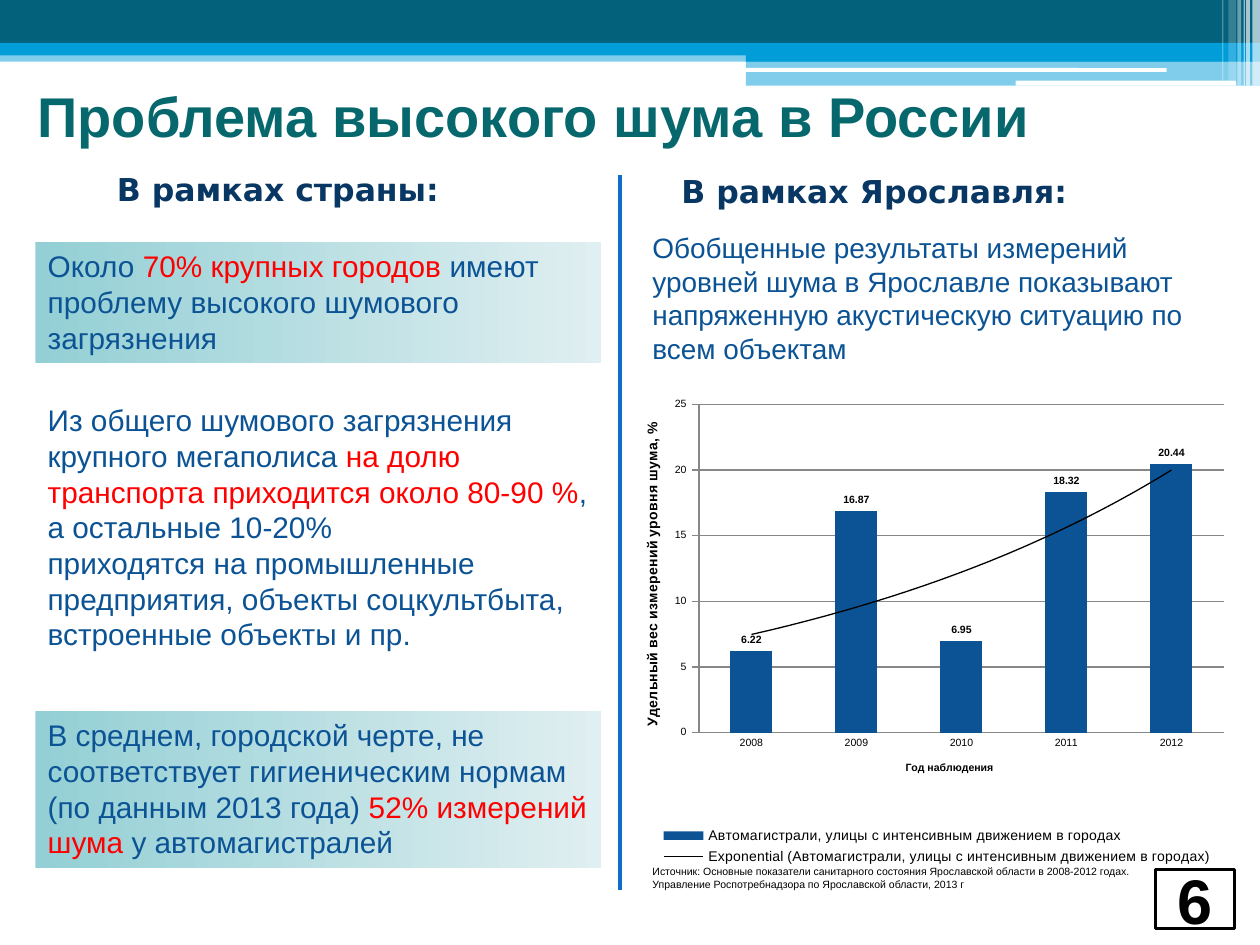
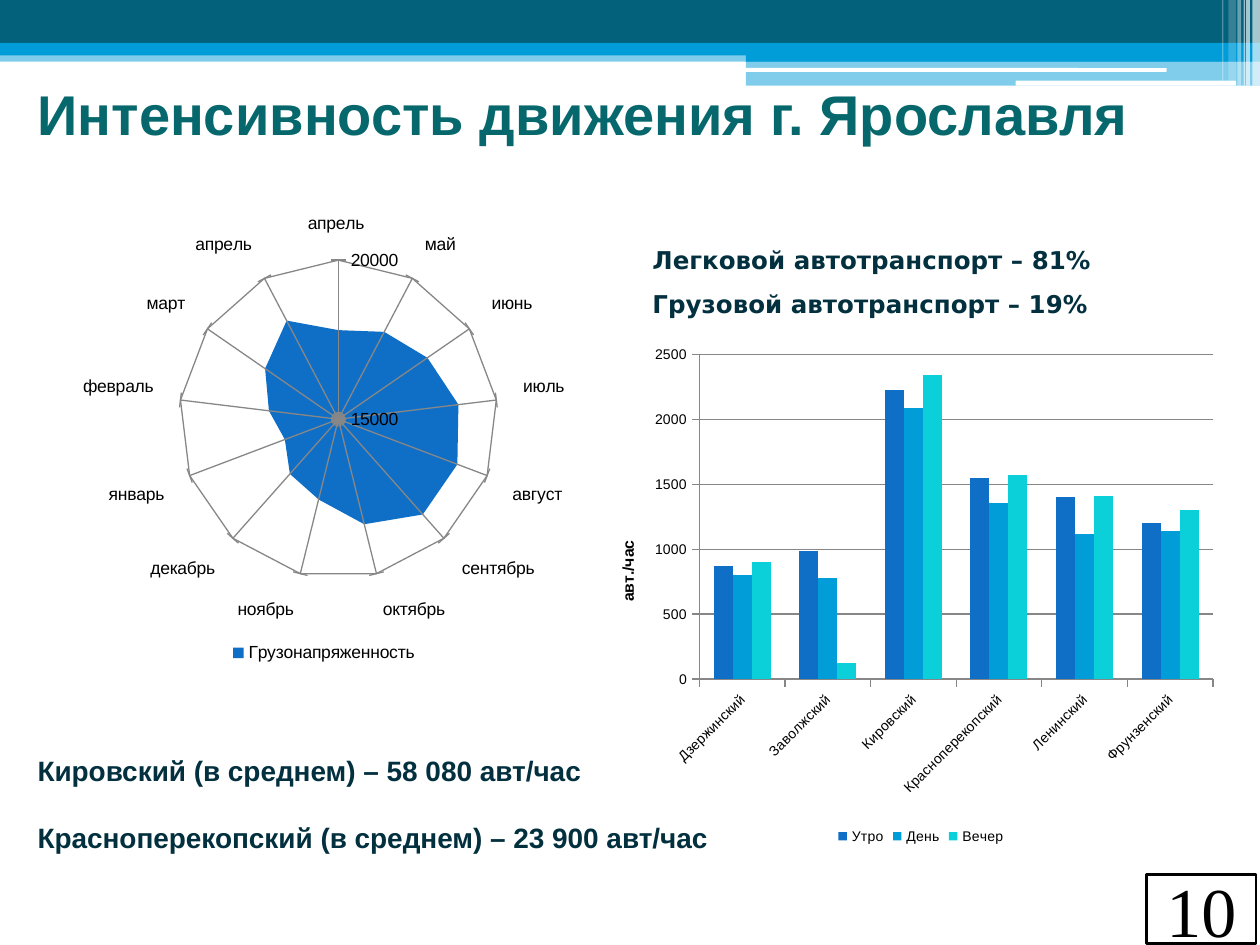
from collections import namedtuple

from lxml import etree
from pptx import Presentation
from pptx.chart.data import CategoryChartData
from pptx.dml.color import RGBColor
from pptx.enum.chart import XL_CHART_TYPE, XL_LABEL_POSITION, XL_LEGEND_POSITION, XL_TICK_MARK
from pptx.enum.shapes import MSO_CONNECTOR, MSO_SHAPE
from pptx.enum.text import MSO_ANCHOR, MSO_AUTO_SIZE, PP_ALIGN
from pptx.oxml import parse_xml
from pptx.oxml.ns import nsdecls, qn
from pptx.util import Inches, Pt

RECTANGLE, ROUNDED = MSO_SHAPE.RECTANGLE, MSO_SHAPE.ROUNDED_RECTANGLE
COLUMNS, RADAR = XL_CHART_TYPE.COLUMN_CLUSTERED, XL_CHART_TYPE.RADAR_FILLED
TICK_NONE, TICK_OUT = XL_TICK_MARK.NONE, XL_TICK_MARK.OUTSIDE

WHITE = RGBColor(0xFF, 0xFF, 0xFF)
BLACK = RGBColor(0x00, 0x00, 0x00)
GREY = RGBColor(0x87, 0x87, 0x87)
RED = RGBColor(0xFF, 0x00, 0x00)
PETROL = RGBColor(0x04, 0x61, 0x7B)
SKY = RGBColor(0x00, 0x9D, 0xD9)
BLUE = RGBColor(0x0F, 0x6F, 0xC6)
CYAN = RGBColor(0x0B, 0xD0, 0xD9)
BODY_BLUE = RGBColor(0x0B, 0x53, 0x94)
NAVY = RGBColor(0x08, 0x37, 0x63)
DARK_TEAL = RGBColor(0x02, 0x30, 0x3E)
TITLE_TEAL = RGBColor(0x06, 0x68, 0x6C)
GRADIENT = (RGBColor(0x93, 0xCF, 0xD5), RGBColor(0xE0, 0xEF, 0xF1))

SANS, WIDE, SERIF = "Arial", "DejaVu Sans", "Times New Roman"
TITLE = {"name": SANS, "size": Pt(32), "bold": True, "color": TITLE_TEAL}
HEADING = {"name": WIDE, "size": Pt(18), "bold": True, "color": NAVY}
FACT = {"name": SANS, "size": Pt(17), "color": BODY_BLUE}
SUMMARY = {"name": SANS, "size": Pt(16), "color": BODY_BLUE}
SOURCE = {"name": SANS, "size": Pt(6), "color": BLACK}
SHARE = {"name": WIDE, "size": Pt(14), "bold": True, "color": DARK_TEAL}
DISTRICT = {"name": SANS, "size": Pt(16), "bold": True, "color": DARK_TEAL}
NUMBER_SANS = {"name": SANS, "size": Pt(36), "bold": True, "color": BLACK}
NUMBER_SERIF = {"name": SERIF, "size": Pt(40), "color": BLACK}

Box = namedtuple("Box", "left top width height")

BANDS = [
    (RECTANGLE, Box(0, 0.4, 10, 0.09), SKY, 50),
    (RECTANGLE, Box(0, 0, 10, 0.34), PETROL, 100),
    (RECTANGLE, Box(0, 0.34, 10, 0.1), SKY, 100),
    (RECTANGLE, Box(5.92, 0.39, 4.08, 0.1), SKY, 100),
    (RECTANGLE, Box(5.92, 0.48, 4.08, 0.2), SKY, 50),
    (ROUNDED, Box(5.91, 0.54, 3.35, 0.03), WHITE, 100),
    (ROUNDED, Box(8.06, 0.64, 1.75, 0.04), WHITE, 100),
]
STRIPES = [(9.94, 0.06, 0.68, 65), (9.89, 0.03, 0.68, 65), (9.87, 0.01, 0.68, 60),
           (9.82, 0.03, 0.68, 40), (9.75, 0.06, 0.64, 20), (9.7, 0.01, 0.64, 30)]


def inches(box):
    """Convert a box to lengths for python-pptx."""
    return [Inches(value) for value in box]


def within(area, left, top, width, height):
    """Return a box placed relative to the corner of an area."""
    return Box(area.left + left, area.top + top, width, height)


def style_font(font, style):
    """Apply a dict of format values to a font."""
    for name, value in style.items():
        if name == "color":
            font.color.rgb = value
        else:
            setattr(font, name, value)


def write(frame, paragraphs, style, align=PP_ALIGN.LEFT, spacing=()):
    """Fill a text frame; each paragraph is a list of strings or (string, colour) pairs."""
    frame.word_wrap = True
    for index, runs in enumerate(paragraphs):
        paragraph = frame.paragraphs[0] if index == 0 else frame.add_paragraph()
        paragraph.alignment = align
        if spacing:
            paragraph.line_spacing = spacing[index]
        for item in runs:
            text, color = (item, style["color"]) if isinstance(item, str) else item
            run = paragraph.add_run()
            run.text = text
            style_font(run.font, {**style, "color": color})


def add_text(slide, box, paragraphs, style, wrap=True, spacing=()):
    """Add a text box that grows with its text."""
    frame = slide.shapes.add_textbox(*inches(box)).text_frame
    write(frame, paragraphs, style, spacing=spacing)
    frame.word_wrap = wrap
    frame.auto_size = MSO_AUTO_SIZE.SHAPE_TO_FIT_TEXT


def add_block(slide, kind, box, color, opacity=100):
    """Add a plain filled shape without outline or shadow."""
    shape = slide.shapes.add_shape(kind, *inches(box))
    shape.shadow.inherit = False
    shape.line.fill.background()
    shape.fill.solid()
    shape.fill.fore_color.rgb = color
    if opacity < 100:
        rgb = shape.element.spPr.find(".//" + qn("a:srgbClr"))
        etree.SubElement(rgb, qn("a:alpha")).set("val", str(opacity * 1000))
    return shape


def add_fact(slide, box, paragraphs):
    """Add a fact on a gradient panel."""
    shape = add_block(slide, RECTANGLE, box, GRADIENT[0])
    shape.fill.gradient()
    shape.fill.gradient_angle = 0
    for stop, color in zip(shape.fill.gradient_stops, GRADIENT):
        stop.color.rgb = color
    write(shape.text_frame, paragraphs, FACT)
    shape.text_frame.vertical_anchor = MSO_ANCHOR.TOP
    shape.text_frame.auto_size = MSO_AUTO_SIZE.SHAPE_TO_FIT_TEXT


def add_header(slide, title, top):
    """Draw the shared bands and the slide title."""
    for band in BANDS:
        add_block(slide, *band)
    for left, width, height, opacity in STRIPES:
        add_block(slide, RECTANGLE, Box(left, 0, width, height), WHITE, opacity)
    add_text(slide, Box(0.2, top, 9.29, 0.64), [[title]], TITLE)


def add_number(slide, box, number, style):
    """Draw the framed slide number."""
    shape = add_block(slide, RECTANGLE, box, WHITE)
    shape.line.color.rgb = BLACK
    shape.line.width = Pt(1.5)
    write(shape.text_frame, [[number]], style, PP_ALIGN.CENTER)
    shape.text_frame.vertical_anchor = MSO_ANCHOR.MIDDLE


def add_divider(slide, left, top, bottom):
    """Draw the vertical line between the columns."""
    line = slide.shapes.add_connector(
        MSO_CONNECTOR.STRAIGHT, Inches(left), Inches(top), Inches(left), Inches(bottom))
    line.line.color.rgb = BLUE
    line.line.width = Pt(2.25)
    etree.SubElement(line.element.spPr, qn("a:effectLst"))


def add_chart(slide, kind, box, categories, series, size, legend_size, scale, category_tick):
    """Add a chart with bottom legend, grey axes and the given (low, high, step) scale."""
    data = CategoryChartData()
    data.categories = categories
    for name, values, _ in series:
        data.add_series(name, values)
    chart = slide.shapes.add_chart(kind, *inches(box), data).chart
    style = {"name": SANS, "size": Pt(size), "bold": False, "color": BLACK}
    style_font(chart.font, style)
    chart.has_title = False
    chart.has_legend = True
    chart.legend.position = XL_LEGEND_POSITION.BOTTOM
    chart.legend.include_in_layout = False
    style_font(chart.legend.font, {**style, "size": Pt(legend_size)})
    axis = chart.value_axis
    axis.minimum_scale, axis.maximum_scale, axis.major_unit = scale
    axis.has_major_gridlines = True
    axis.major_gridlines.format.line.color.rgb = GREY
    for axis, tick in ((chart.value_axis, TICK_OUT), (chart.category_axis, category_tick)):
        axis.major_tick_mark = tick
        axis.minor_tick_mark = TICK_NONE
        axis.format.line.color.rgb = GREY
        style_font(axis.tick_labels.font, style)
    for plotted, (_, _, color) in zip(chart.plots[0].series, series):
        plotted.format.fill.solid()
        plotted.format.fill.fore_color.rgb = color
    chart.plots[0].vary_by_categories = False
    return chart


def add_columns(slide, box, layout, *details):
    """Add a column chart whose inner plot area follows the layout fractions."""
    chart = add_chart(slide, COLUMNS, box, *details)
    chart.plots[0].gap_width = 150
    chart.plots[0].overlap = 0
    area = chart.element.find(".//" + qn("c:plotArea"))
    for existing in area.findall(qn("c:layout")):
        area.remove(existing)
    parts = "".join(f'<c:{tag} val="{value}"/>' for tag, value in zip("xywh", layout))
    area.insert(0, parse_xml(
        f'<c:layout {nsdecls("c")}><c:manualLayout><c:layoutTarget val="inner"/>'
        f'<c:xMode val="edge"/><c:yMode val="edge"/>{parts}</c:manualLayout></c:layout>'))
    return chart


def title_axis(axis, text, size):
    """Give an axis a bold title."""
    write_to = axis.axis_title.text_frame.paragraphs[0].add_run()
    write_to.text = text
    style_font(write_to.font, {"name": SANS, "size": Pt(size), "bold": True, "color": BLACK})


def add_noise_chart(slide, box):
    """Chart the yearly share of noise measurements with its exponential trend."""
    name = "Автомагистрали, улицы с интенсивным движением в городах"
    chart = add_columns(
        slide, box, (0.099, 0.024, 0.883, 0.689),
        ["2008", "2009", "2010", "2011", "2012"],
        [(name, [6.22, 16.87, 6.95, 18.32, 20.44], BODY_BLUE)], 6, 8, (0, 25, 5), TICK_NONE)
    title_axis(chart.category_axis, "Год наблюдения", 6)
    title_axis(chart.value_axis, "Удельный вес измерений уровня шума, %", 8)
    labels = chart.plots[0].series[0].data_labels
    labels.show_value = True
    labels.position = XL_LABEL_POSITION.OUTSIDE_END
    style_font(labels.font, {"name": SANS, "size": Pt(6), "bold": True, "color": BLACK})
    chart.element.find(".//" + qn("c:ser")).find(qn("c:cat")).addprevious(parse_xml(
        f'<c:trendline {nsdecls("c", "a")}><c:spPr><a:ln w="9525"><a:solidFill>'
        f'<a:srgbClr val="{BLACK}"/></a:solidFill></a:ln></c:spPr>'
        '<c:trendlineType val="exp"/><c:dispRSqr val="0"/><c:dispEq val="0"/></c:trendline>'))


def add_country_column(slide, area):
    """Place the facts about the country."""
    add_text(slide, within(area, 0.55, 0, 2.78, 0.4), [["В рамках страны:"]], HEADING, wrap=False)
    add_fact(slide, within(area, 0, 0.62, area.width, 0.96), [
        ["Около ", ("70% крупных городов ", RED), "имеют проблему высокого шумового"],
        ["загрязнения"]])
    add_text(slide, within(area, 0, 1.84, 4.57, 2.1), [
        ["Из общего шумового загрязнения крупного мегаполиса ", ("на долю", RED)],
        [("транспорта приходится около 80-90 %", RED), ", а остальные 10-20%"],
        ["приходятся на промышленные предприятия, объекты соцкультбыта,"],
        ["встроенные объекты и пр."]], FACT)
    add_fact(slide, within(area, 0, 4.34, area.width, 1.25), [
        ["В среднем, городской черте, не соответствует гигиеническим нормам "
         "(по данным 2013 года) ", ("52% измерений шума", RED), " у автомагистралей"]])


def add_city_column(slide, area):
    """Place the summary, chart and source for the city."""
    add_text(slide, within(area, 0.23, 0.02, 3.3, 0.4), [["В рамках Ярославля:"]], HEADING,
             wrap=False)
    add_text(slide, within(area, 0, 0.48, 4.8, 1.18), [
        ["Обобщенные результаты измерений уровней шума в Ярославле показывают "
         "напряженную акустическую ситуацию по всем объектам"]], SUMMARY)
    add_noise_chart(slide, within(area, 0, 1.82, area.width, 3.78))
    add_text(slide, within(area, 0, 5.52, 4.09, 0.3), [
        ["Источник: Основные показатели санитарного состояния Ярославской области "
         "в 2008-2012 годах. Управление Роспотребнадзора по Ярославской области, 2013 г"]], SOURCE)


def add_load_chart(slide, box):
    """Chart the monthly traffic load as a filled radar."""
    months = ["апрель ", "май", "июнь", "июль", "август", "сентябрь", "октябрь", "ноябрь",
              "декабрь", "январь", "февраль", "март", "апрель"]
    loads = [17800, 18100, 18400, 18800, 19000, 19000, 18400, 17600, 17300, 16800, 17200,
             17800, 18500]
    chart = add_chart(slide, RADAR, box, months, [("Грузонапряженность", loads, BLUE)],
                      10, 10, (15000, 20000, 5000), TICK_NONE)
    chart.category_axis.has_major_gridlines = True
    chart.category_axis.major_gridlines.format.line.color.rgb = GREY
    chart.value_axis.tick_labels.number_format = "General"
    chart.value_axis.tick_labels.number_format_is_linked = False


def add_district_chart(slide, box):
    """Chart traffic by district and time of day."""
    chart = add_columns(
        slide, box, (0.144, 0.04, 0.825, 0.63),
        ["Дзержинский", "Заволжский", "Кировский", "Красноперекопский", "Ленинский",
         "Фрунзенский"],
        [("Утро", [870, 990, 2230, 1550, 1400, 1200], BLUE),
         ("День", [800, 780, 2090, 1360, 1120, 1140], SKY),
         ("Вечер", [900, 120, 2340, 1570, 1410, 1300], CYAN)], 8, 8, (0, 2500, 500), TICK_OUT)
    title_axis(chart.value_axis, "авт./час", 9)
    chart.element.xpath(".//c:catAx/c:txPr/a:bodyPr")[0].set("rot", "-2700000")


def build_noise_slide(slide):
    """Build the slide about high noise."""
    add_header(slide, "Проблема высокого шума в России", 0.6)
    add_country_column(slide, Box(0.28, 1.3, 4.49, 5.59))
    add_city_column(slide, Box(5.08, 1.3, 4.72, 5.82))
    add_number(slide, Box(9.17, 6.9, 0.63, 0.47), "6", NUMBER_SANS)
    add_divider(slide, 4.92, 1.39, 7.06)


def build_traffic_slide(slide):
    """Build the slide about traffic intensity."""
    add_header(slide, "Интенсивность движения г. Ярославля", 0.58)
    add_text(slide, Box(5.08, 1.78, 4.57, 0.81), [
        ["Легковой автотранспорт – 81%"], ["Грузовой автотранспорт – 19%"]],
        SHARE, spacing=(1.5, 1.5))
    add_text(slide, Box(0.2, 5.8, 5.77, 1.04), [
        ["Кировский (в среднем) – 58 080 авт/час"],
        ["Красноперекопский (в среднем) – 23 900 авт/час"]], DISTRICT, spacing=(1.5, 2.0))
    add_load_chart(slide, Box(0.12, 1.62, 4.9, 3.68))
    add_district_chart(slide, Box(4.84, 2.65, 4.94, 4.09))
    add_number(slide, Box(9.1, 6.94, 0.87, 0.55), "10", NUMBER_SERIF)


def main():
    """Build and save the presentation."""
    presentation = Presentation()
    presentation.slide_width, presentation.slide_height = Inches(10), Inches(7.5)
    for build in (build_noise_slide, build_traffic_slide):
        build(presentation.slides.add_slide(presentation.slide_layouts[6]))
    presentation.save("out.pptx")


if __name__ == "__main__":
    main()
